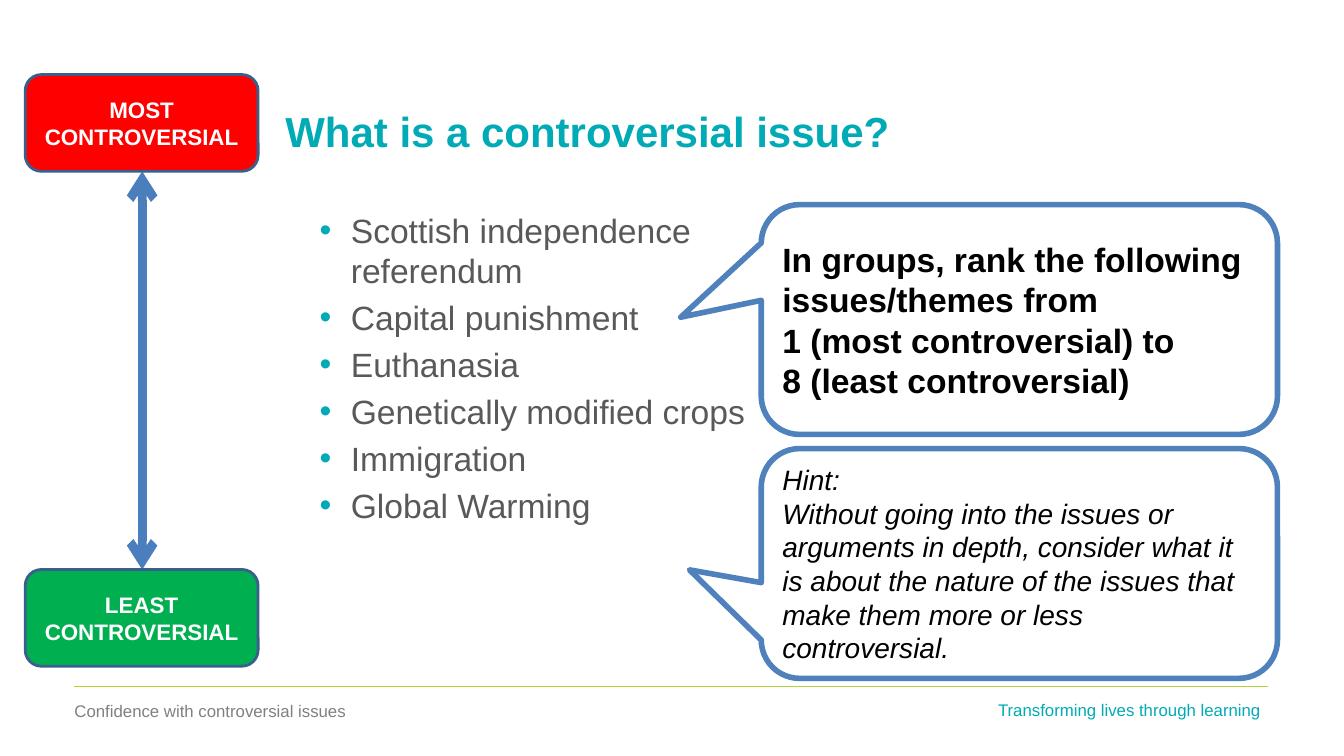
from dataclasses import dataclass

import pptx
import pptx.dml.color
import pptx.enum.shapes
import pptx.enum.text
import pptx.oxml
import pptx.oxml.ns
import pptx.util
from pptx.util import Inches

Align = pptx.enum.text.PP_ALIGN
Anchor = pptx.enum.text.MSO_ANCHOR
Shape = pptx.enum.shapes.MSO_SHAPE
NAMESPACE = pptx.oxml.ns.nsdecls("a")

COLOURS = {
    "white": "FFFFFF", "black": "000000", "teal": "00ABB5", "grey": "808080",
    "body": "595959", "lime": "B3D236", "red": "FF0000", "green": "00B050",
    "label_edge": "3A5F8C", "arrow": "4B7EBC", "callout_edge": "4F81BD",
}
FORMATS = {
    "title": {"size": 30, "bold": True, "colour": "teal"},
    "issue": {"size": 24, "bold": False, "colour": "body"},
    "label": {"size": 16, "bold": True, "colour": "white"},
    "task": {"size": 24, "bold": True, "colour": "black"},
    "hint": {"size": 20, "italic": True, "colour": "black"},
    "slogan": {"size": 12, "colour": "teal"},
    "footer": {"size": 12, "colour": "grey"},
}
ISSUES = ["Scottish independence referendum", "Capital punishment", "Euthanasia",
          "Genetically modified crops", "Immigration", "Global Warming"]


@dataclass
class Panel:
    left: float
    top: float
    width: float
    height: float
    preset: Shape
    adjustments: list[float]
    fill: str
    edge: str
    edge_width: float
    lines: list[str]
    style: str
    align: Align


@dataclass
class Footer:
    left: float
    top: float
    text: str
    style: str


@dataclass
class Line:
    start: tuple[float, float]
    end: tuple[float, float]
    colour: str
    width: float
    arrows: bool


def label(top: float, fill: str, lines: list[str]) -> Panel:
    return Panel(0.25, top, 2.31, 0.96, Shape.ROUNDED_RECTANGLE, [0.167], fill,
                 "label_edge", 2, lines, "label", Align.CENTER)


def callout(top: float, tip: list[float], lines: list[str], style: str) -> Panel:
    return Panel(7.55, top, 5.12, 2.28, Shape.ROUNDED_RECTANGULAR_CALLOUT, tip + [0.167],
                 "white", "callout_edge", 4, lines, style, Align.LEFT)


PANELS = [
    label(0.74, "red", ["MOST CONTROVERSIAL"]),
    label(5.65, "green", ["LEAST", "CONTROVERSIAL"]),
    callout(2.03, [-0.656, -0.01],
            ["In groups, rank the following issues/themes from",
             "1 (most controversial) to", "8 (least controversial)"], "task"),
    callout(4.45, [-0.639, 0.028],
            ["Hint:", "Without going into the issues or arguments in depth, consider what it "
             "is about the nature of the issues that make them more or less controversial."],
            "hint"),
]
FOOTERS = [
    Footer(0.64, 6.9, "Confidence with controversial issues", "footer"),
    Footer(9.8, 6.89, "Transforming lives through learning", "slogan"),
]
LINES = [
    Line((0.73, 6.81), (12.58, 6.81), "lime", 0.75, False),
    Line((1.41, 1.7), (1.41, 5.65), "arrow", 6.25, True),
]


def colour(name: str) -> pptx.dml.color.RGBColor:
    return pptx.dml.color.RGBColor.from_string(COLOURS[name])


def write(box, lines: list[str], style: str, align: Align, anchor: Anchor) -> None:
    frame = box.text_frame
    frame.word_wrap = True
    frame.auto_size = pptx.enum.text.MSO_AUTO_SIZE.NONE
    frame.vertical_anchor = anchor
    for index, text in enumerate(lines):
        para = frame.add_paragraph() if index else frame.paragraphs[0]
        para.alignment = align
        para.space_before = pptx.util.Pt(0)
        span = para.add_run()
        span.text = text
        span.font.name = "Arial"
        for key, value in FORMATS[style].items():
            if key == "colour":
                span.font.color.rgb = colour(value)
            else:
                setattr(span.font, key, pptx.util.Pt(value) if key == "size" else value)


def place(box, left: float, top: float, width: float, height: float) -> None:
    area = {"left": left, "top": top, "width": width, "height": height}
    for key, value in area.items():
        setattr(box, key, Inches(value))


def add_bullets(box) -> None:
    bullet = (
        f'<a:buClr {NAMESPACE}><a:srgbClr val="{COLOURS["teal"]}"/></a:buClr>',
        f'<a:buFont {NAMESPACE} typeface="Arial"/>',
        f'<a:buChar {NAMESPACE} char="•"/>',
    )
    for index, para in enumerate(box.text_frame.paragraphs):
        para.level = 1
        para.space_before = pptx.util.Pt(4.8 if index else 0)
        properties = para._p.get_or_add_pPr()
        properties.set("marL", str(Inches(0.81)))
        properties.set("indent", str(Inches(-0.31)))
        for element in bullet:
            properties.append(pptx.oxml.parse_xml(element))


def add_line(page, line: Line) -> None:
    ends = [Inches(value) for value in line.start + line.end]
    connector = page.shapes.add_connector(pptx.enum.shapes.MSO_CONNECTOR.STRAIGHT, *ends)
    connector.line.color.rgb = colour(line.colour)
    connector.line.width = pptx.util.Pt(line.width)
    if line.arrows:
        outline = connector.line._get_or_add_ln()
        for tag in ("headEnd", "tailEnd"):
            outline.append(pptx.oxml.parse_xml(f'<a:{tag} {NAMESPACE} type="arrow"/>'))
    connector._element.spPr.append(pptx.oxml.parse_xml(f"<a:effectLst {NAMESPACE}/>"))


def add_panel(page, panel: Panel) -> None:
    area = [Inches(value) for value in (panel.left, panel.top, panel.width, panel.height)]
    box = page.shapes.add_shape(panel.preset, *area)
    for index, value in enumerate(panel.adjustments):
        box.adjustments[index] = value
    box.shadow.inherit = False
    box.fill.solid()
    box.fill.fore_color.rgb = colour(panel.fill)
    box.line.color.rgb = colour(panel.edge)
    box.line.width = pptx.util.Pt(panel.edge_width)
    write(box, panel.lines, panel.style, panel.align, Anchor.MIDDLE)


def add_footer(page, footer: Footer) -> None:
    box = page.shapes.add_textbox(Inches(footer.left), Inches(footer.top),
                                  Inches(3.01), Inches(0.3))
    write(box, [footer.text], footer.style, Align.LEFT, Anchor.TOP)


def main() -> None:
    deck = pptx.Presentation()
    deck.slide_width, deck.slide_height = Inches(13.33), Inches(7.5)
    page = deck.slides.add_slide(deck.slide_layouts[1])
    title, body = page.shapes.title, page.placeholders[1]
    place(title, 2.73, 0.91, 9.85, 0.78)
    write(title, ["What is a controversial issue?"], "title", Align.LEFT, Anchor.MIDDLE)
    place(body, 2.57, 2.03, 5.89, 4.05)
    write(body, ISSUES, "issue", Align.LEFT, Anchor.TOP)
    add_bullets(body)
    for line in LINES:
        add_line(page, line)
    for footer in FOOTERS:
        add_footer(page, footer)
    for panel in PANELS:
        add_panel(page, panel)
    deck.save("out.pptx")


if __name__ == "__main__":
    main()
